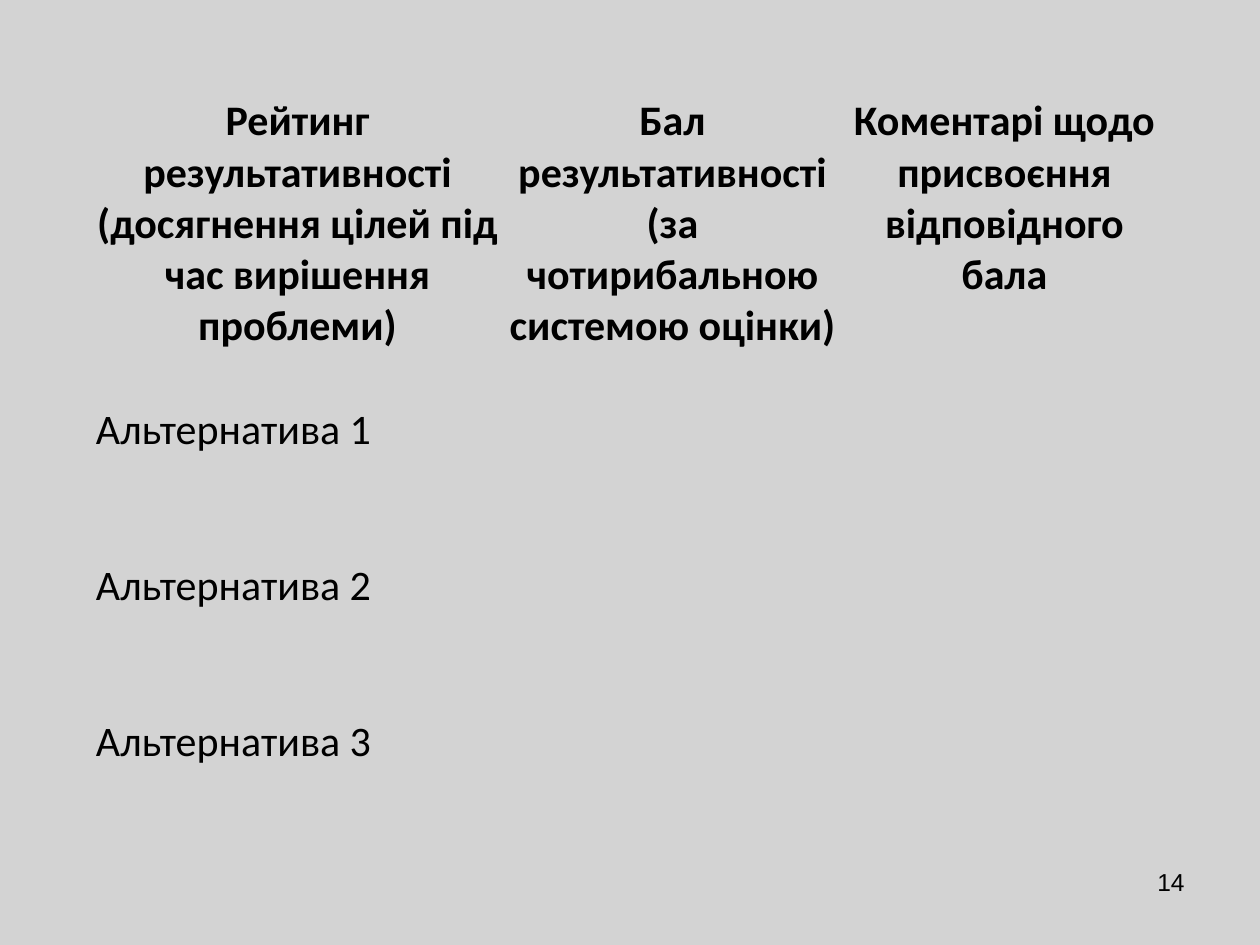
from dataclasses import dataclass

from pptx import Presentation
from pptx import util as u
from pptx.dml.color import RGBColor
from pptx.enum import text

PX = 914400 / 126
NO_STYLE_NO_GRID = "{2D5ABB26-0587-4C30-8999-92F81FD0307C}"


def px(length):
    return u.Emu(round(length * PX))


@dataclass(frozen=True)
class Theme:
    background: RGBColor = RGBColor(0xD3, 0xD3, 0xD3)
    ink: RGBColor = RGBColor(0, 0, 0)
    table_font: str = "Calibri"
    number_font: str = "Arial"
    table_size: int = 24
    number_size: int = 14
    cell_inset: int = 2


class PageBuilder:
    """Holds the theme and the current slide."""

    def __init__(self, page, theme):
        self.page = page
        self.theme = theme
        fill = page.background.fill
        fill.solid()
        fill.fore_color.rgb = theme.background

    def format_text(self, frame, font_name, size, align, bold=False):
        frame.word_wrap = True
        for para in frame.paragraphs:
            para.alignment = align
            para.font.size = u.Pt(size)
            for span in para.runs:
                span.font.name = font_name
                span.font.size = u.Pt(size)
                span.font.bold = bold
                span.font.color.rgb = self.theme.ink

    def page_number(self, number, left, top, width, height):
        box = self.page.shapes.add_textbox(px(left), px(top), px(width), px(height))
        box.text_frame.text = str(number)
        self.format_text(box.text_frame, self.theme.number_font,
                         self.theme.number_size, text.PP_ALIGN.RIGHT)

    def table(self, rows, left, top, widths, heights):
        """Add a plain table whose first row is a bold, centred header."""
        frame = self.page.shapes.add_table(
            len(heights), len(widths), px(left), px(top),
            px(sum(widths)), px(sum(heights)))
        table = frame.table
        table.first_row = table.horz_banding = False
        table._tbl.tblPr[0].text = NO_STYLE_NO_GRID
        for column, width in zip(table.columns, widths):
            column.width = px(width)
        for row, height in zip(table.rows, heights):
            row.height = px(height)
        for r, row in enumerate(rows):
            for c, wording in enumerate(row):
                self.cell(table.cell(r, c), wording, header=r == 0)

    def cell(self, cell, wording, header):
        inset = px(self.theme.cell_inset)
        cell.margin_left = cell.margin_right = inset
        cell.margin_top = cell.margin_bottom = inset
        cell.fill.background()
        cell.text_frame.text = wording
        align = text.PP_ALIGN.CENTER if header else text.PP_ALIGN.LEFT
        self.format_text(cell.text_frame, self.theme.table_font,
                         self.theme.table_size, align, bold=header)


def main():
    deck = Presentation()
    deck.slide_width, deck.slide_height = px(1260), px(945)
    builder = PageBuilder(deck.slides.add_slide(deck.slide_layouts[6]), Theme())

    builder.page_number(14, 903, 861, 294, 66)
    header = [
        "Рейтинг результативності (досягнення цілей під час вирішення проблеми)",
        "Бал результативності (за чотирибальною системою оцінки)",
        "Коментарі щодо присвоєння відповідного бала",
    ]
    alternatives = [[f"Альтернатива {n}", "", ""] for n in (1, 2, 3)]
    builder.table([header, *alternatives], 94, 94,
                  widths=[407, 343, 321], heights=[309, 156, 156, 106])
    deck.save("out.pptx")


if __name__ == "__main__":
    main()
